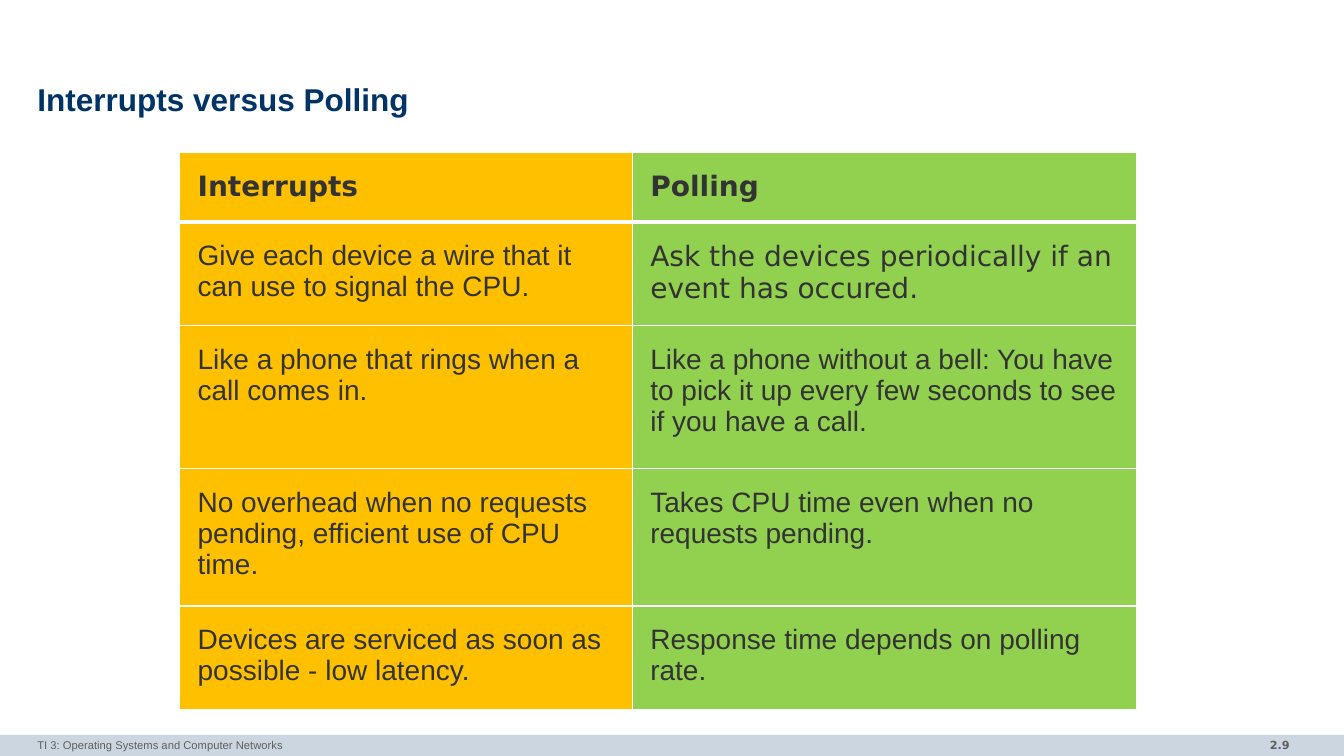
import pptx
import pptx.dml.color
import pptx.enum.shapes
import pptx.enum.text
import pptx.oxml
import pptx.oxml.ns
import pptx.util

Inches = pptx.util.Inches
ALIGN = pptx.enum.text.PP_ALIGN
ANCHOR = pptx.enum.text.MSO_ANCHOR

COLUMNS = [(4.49, "FFC000"), (5, "92D050")]
ROW_HEIGHTS = [0.66, 0.99, 1.42, 1.24, 0.99]
COMPARISON = [
    ("Interrupts", "Polling"),
    ("Give each device a wire that it can use to signal the CPU.",
     "Ask the devices periodically if an event has occured."),
    ("Like a phone that rings when a call comes in.",
     "Like a phone without a bell: You have to pick it up every few seconds to see if you have a call."),
    ("No overhead when no requests pending, efficient use of CPU time.",
     "Takes CPU time even when no requests pending."),
    ("Devices are serviced as soon as possible - low latency.",
     "Response time depends on polling rate."),
]
DEJAVU_CELLS = {(0, 0), (0, 1), (1, 1)}


def color(value):
    return pptx.dml.color.RGBColor.from_string(value)


def style_paragraph(paragraph, size, font_name, value, bold=False, align=ALIGN.LEFT):
    paragraph.alignment = align
    font = paragraph.font
    font.size = pptx.util.Pt(size)
    font.name = font_name
    font.bold = bold
    font.color.rgb = color(value)


def set_margins(target, horizontal, vertical):
    target.margin_left = target.margin_right = Inches(horizontal)
    target.margin_top = target.margin_bottom = Inches(vertical)


def add_text(page, box, text, margins, anchor=ANCHOR.TOP, **style):
    frame = page.shapes.add_textbox(*map(Inches, box)).text_frame
    frame.word_wrap = True
    frame.vertical_anchor = anchor
    set_margins(frame, *margins)
    paragraph = frame.paragraphs[0]
    paragraph.text = text
    style_paragraph(paragraph, **style)
    return paragraph


def add_title(page, box):
    paragraph = add_text(page, box, "Interrupts versus Polling", (0, 0), ANCHOR.MIDDLE,
                         size=22.5, font_name="Arial", value="003366", bold=True)
    paragraph.line_spacing = 0.85


def add_footer(page, box):
    left, top, width, height = box
    bar = page.shapes.add_shape(pptx.enum.shapes.MSO_SHAPE.RECTANGLE, *map(Inches, box))
    bar.shadow.inherit = False
    bar.fill.solid()
    bar.fill.fore_color.rgb = color("CCD6E0")
    bar.line.fill.background()
    add_text(page, (left + width - 2.23, top - 0.01, 1.79, 0.23), "2.9", (0.1, 0.05),
             size=8, font_name="DejaVu Sans", value="5F5F5F", bold=True, align=ALIGN.RIGHT)
    add_text(page, (left + 0.37, top - 0.01, 8.72, 0.22),
             "TI 3: Operating Systems and Computer Networks", (0, 0.05),
             size=8, font_name="Arial", value="5F5F5F")


def set_borders(cell, widths):
    properties = cell._tc.get_or_add_tcPr()
    for index, (side, points) in enumerate(widths.items()):
        border = pptx.oxml.parse_xml(
            f'<a:ln{side} {pptx.oxml.ns.nsdecls("a")} w="{pptx.util.Pt(points)}">'
            f'<a:solidFill><a:srgbClr val="FFFFFF"/></a:solidFill></a:ln{side}>')
        properties.insert(index, border)


def add_comparison(page, box):
    table = page.shapes.add_table(len(COMPARISON), len(COLUMNS), *map(Inches, box)).table
    for column, (width, _) in zip(table.columns, COLUMNS):
        column.width = Inches(width)
    for row, height in zip(table.rows, ROW_HEIGHTS):
        row.height = Inches(height)
    for row_index, texts in enumerate(COMPARISON):
        for column_index, text in enumerate(texts):
            cell = table.cell(row_index, column_index)
            set_margins(cell, 0.18, 0.18)
            cell.fill.solid()
            cell.fill.fore_color.rgb = color(COLUMNS[column_index][1])
            set_borders(cell, {"L": 1, "R": 1,
                               "T": 3 if row_index == 1 else 1,
                               "B": 3 if row_index == 0 else 1})
            paragraph = cell.text_frame.paragraphs[0]
            paragraph.text = text
            font_name = "DejaVu Sans" if (row_index, column_index) in DEJAVU_CELLS else "Arial"
            style_paragraph(paragraph, 20, font_name, "333333", bold=row_index == 0)


def main():
    deck = pptx.Presentation()
    deck.slide_width = Inches(13.33)
    deck.slide_height = Inches(7.5)
    page = deck.slides.add_slide(deck.slide_layouts[6])
    add_footer(page, (0, 7.29, 13.33, 0.21))
    add_title(page, (0.37, 0.78, 12.6, 0.47))
    add_comparison(page, (1.78, 1.51, 9.49, sum(ROW_HEIGHTS)))
    deck.save("out.pptx")


if __name__ == "__main__":
    main()
